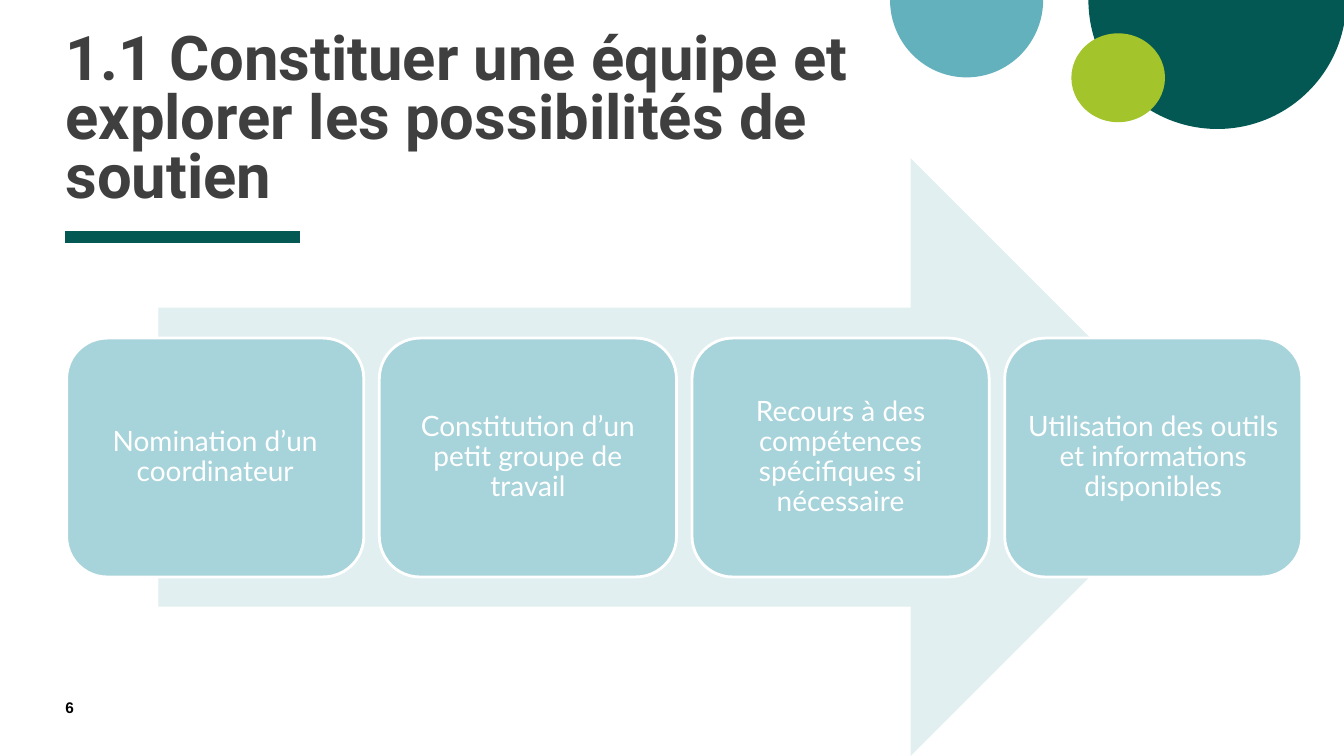
from lxml import etree
from pptx import Presentation, util as u
from pptx.dml.color import RGBColor
from pptx.enum import shapes, text
from pptx.oxml.ns import qn

STEPS = [
    "Nomination d’un coordinateur",
    "Constitution d’un petit groupe de travail",
    "Recours à des compétences spécifiques si nécessaire",
    "Utilisation des outils et informations disponibles",
]


def color(value):
    return RGBColor.from_string(value)


class Deck:
    dark, teal, lime = "035854", "64B1BE", "A3C42A"
    pale, card, white = "E1EFF1", "A7D3DA", "FFFFFF"
    title = {"name": "Roboto", "size": u.Pt(44), "bold": True}
    number = {"name": "Arial", "size": u.Pt(11), "bold": True}
    step = {"name": "Lato", "size": u.Pt(20), "bold": False}

    def __init__(self, width, height):
        self.prs = Presentation()
        self.prs.slide_width = u.Cm(width)
        self.prs.slide_height = u.Cm(height)
        self.s = self.prs.slides.add_slide(self.prs.slide_layouts[6])

    def shape(self, kind, box, fill, adjust=(), line=None):
        sp = self.s.shapes.add_shape(kind, *map(u.Cm, box))
        sp.shadow.inherit = False
        sp.fill.solid()
        sp.fill.fore_color.rgb = color(fill)
        if line:
            sp.line.color.rgb = color(line)
            sp.line.width = u.Pt(2)
        else:
            sp.line.fill.background()
        for i, value in enumerate(adjust):
            sp.adjustments[i] = value
        return sp

    def line(self, x1, y1, x2, y2, stroke, width):
        cx = self.s.shapes.add_connector(
            shapes.MSO_CONNECTOR.STRAIGHT, *map(u.Cm, (x1, y1, x2, y2)))
        cx.line.color.rgb = color(stroke)
        cx.line.width = u.Pt(width)
        etree.SubElement(cx._element.spPr, qn("a:effectLst"))

    def set_text(self, sp, words, font, ink, inset=0, spacing=1.0,
                 anchor=text.MSO_ANCHOR.TOP, align=text.PP_ALIGN.LEFT):
        tf = sp.text_frame
        frame = {"word_wrap": True, "vertical_anchor": anchor}
        frame.update({f"margin_{side}": u.Cm(inset)
                      for side in ("left", "top", "right", "bottom")})
        for key, value in frame.items():
            setattr(tf, key, value)
        p = tf.paragraphs[0]
        p.alignment = align
        p.line_spacing = spacing
        r = p.add_run()
        r.text = words
        for key, value in font.items():
            setattr(r.font, key, value)
        r.font.color.rgb = color(ink)

    def label(self, box, words, font, ink, **layout):
        sp = self.s.shapes.add_textbox(*map(u.Cm, box))
        self.set_text(sp, words, font, ink, **layout)


def main():
    deck = Deck(33.87, 19.05)
    kinds = shapes.MSO_SHAPE
    deck.shape(kinds.PIE, (27.43, -3.25, 6.5, 6.5), deck.dark, (0, 108))
    deck.line(1.65, 5.97, 7.57, 5.97, deck.dark, 8)
    deck.shape(kinds.PIE, (22.43, -1.96, 3.86, 3.91), deck.teal, (0, 108))
    deck.shape(kinds.OVAL, (27, 0.84, 2.36, 2.24), deck.lime)
    deck.label((1.65, 0.8, 22.15, 4.5),
               "1.1 Constituer une équipe et explorer les possibilités de soutien",
               deck.title, "3F3F3F", spacing=0.8, anchor=text.MSO_ANCHOR.BOTTOM)
    deck.label((1.65, 17.58, 1.45, 0.69), "6", deck.number, "000000")
    deck.shape(kinds.RIGHT_ARROW, (3.99, 3.99, 26.49, 15.06), deck.pale, (0.5, 0.5))
    for i, words in enumerate(STEPS):
        sp = deck.shape(kinds.ROUNDED_RECTANGLE, (1.68 + 7.88 * i, 8.52, 7.49, 6.02),
                        deck.card, (0.17,), deck.white)
        deck.set_text(sp, words, deck.step, deck.white, inset=0.28, spacing=0.9,
                      anchor=text.MSO_ANCHOR.MIDDLE, align=text.PP_ALIGN.CENTER)
    deck.prs.save("out.pptx")


if __name__ == "__main__":
    main()
